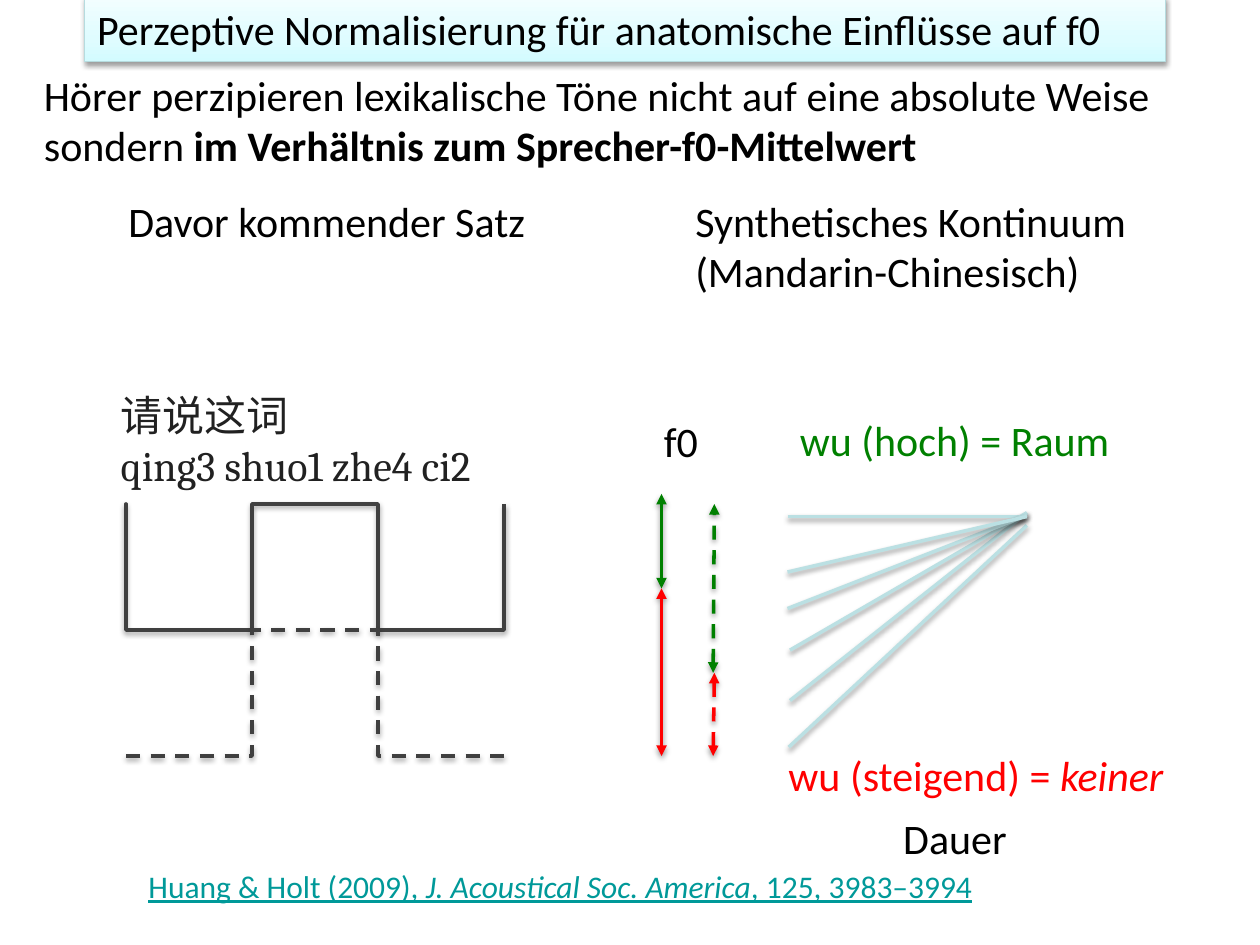
from copy import deepcopy

from lxml import etree
from pptx import Presentation
from pptx import util as u
from pptx.dml.color import RGBColor
from pptx.enum import dml, shapes, text
from pptx.oxml.ns import qn

BLACK = RGBColor(0x00, 0x00, 0x00)
GREEN = RGBColor(0x00, 0x80, 0x00)
RED = RGBColor(0xFF, 0x00, 0x00)
TEAL = RGBColor(0x00, 0x99, 0x99)
INK = RGBColor(0x21, 0x21, 0x21)
CURVE_GREY = RGBColor(0x40, 0x40, 0x40)
PALE_BLUE = RGBColor(0xBB, 0xE0, 0xE3)
TITLE_EDGE = RGBColor(0xB6, 0xDC, 0xDF)
TITLE_STOPS = [(0, RGBColor(0xD3, 0xFB, 0xFF)),
               (0.35, RGBColor(0xDF, 0xFC, 0xFF)),
               (1, RGBColor(0xF2, 0xFE, 0xFF))]

TITLE = "Perzeptive Normalisierung für anatomische Einflüsse auf f0"

# (left, top, width, height), colour, size, font, paragraphs of (text, style) runs
LABELS = [
    ((0.25, 0.5, 9.17, 0.91), BLACK, 24, "Calibri",
     [[("Hörer perzipieren lexikalische Töne nicht auf eine absolute Weise sondern ", ""),
       ("im Verhältnis zum Sprecher-f0-Mittelwert", "b")]]),
    ((0.92, 1.5, 3.5, 0.5), BLACK, 24, "Calibri", [[("Davor kommender Satz", "")]]),
    ((5.42, 1.5, 3.83, 0.91), BLACK, 24, "Calibri",
     [[("Synthetisches Kontinuum (Mandarin-Chinesisch)", "")]]),
    ((0.86, 3.04, 3.28, 0.91), INK, 24, "Cambria",
     [[("请说这词", "")], [("qing3 shuo1 zhe4 ci2", "")]]),
    ((5.17, 3.25, 0.58, 0.51), BLACK, 24, "Calibri", [[("f0", "")]]),
    ((6.25, 3.24, 2.91, 0.51), GREEN, 24, "Calibri", [[("wu (hoch) = Raum", "")]]),
    ((6.16, 5.9, 3.26, 0.51), RED, 24, "Calibri",
     [[("wu (steigend) = ", ""), ("keiner", "i")]]),
    ((7.07, 6.4, 1.08, 0.51), BLACK, 24, "Calibri", [[("Dauer", "")]]),
    ((1.08, 6.83, 8.08, 0.4), TEAL, 18, "Calibri",
     [[("Huang & Holt (2009), ", "u"), ("J. Acoustical Soc. America", "ui"),
       (", 125, 3983–3994", "u")]]),
]

# Pitch contour of the carrier sentence; the dashed one lies lower
CONTOUR = [
    (0.67, 4.56), (0.71, 4.52), (0.77, 4.46), (0.81, 4.44), (0.87, 4.43), (0.94, 4.41),
    (0.97, 4.39), (1.03, 4.38), (1.15, 4.39), (1.2, 4.42), (1.26, 4.45), (1.31, 4.47),
    (1.38, 4.51), (1.44, 4.56), (1.49, 4.6), (1.52, 4.64), (1.6, 4.63), (1.68, 4.64),
    (1.75, 4.66), (1.81, 4.64), (1.88, 4.61), (1.95, 4.56), (2.01, 4.5), (2.06, 4.48),
    (2.12, 4.42), (2.2, 4.38), (2.28, 4.32), (2.36, 4.29), (2.48, 4.23), (2.59, 4.19),
    (2.68, 4.17), (2.75, 4.17), (2.82, 4.18), (2.89, 4.2), (2.96, 4.25), (3.05, 4.3),
    (3.16, 4.34), (3.2, 4.36), (3.27, 4.42), (3.33, 4.48), (3.37, 4.53), (3.43, 4.56),
    (3.49, 4.57), (3.58, 4.58), (3.68, 4.57), (3.74, 4.54), (3.8, 4.52), (3.85, 4.5),
    (3.93, 4.46), (4.03, 4.44), (4.06, 4.43), (4.15, 4.42), (4.25, 4.44), (4.31, 4.47),
    (4.33, 4.48)]
CONTOURS = [(0, False), (1.25, True)]  # drop, dashed

# start, end, colour, dashed
RANGES = [((5.25, 4.67), (5.25, 3.92), GREEN, False),
          ((5.25, 6), (5.25, 4.67), RED, False),
          ((5.66, 5.34), (5.67, 4), GREEN, True),
          ((5.66, 6), (5.67, 5.34), RED, True)]
CONTINUUM = [((6.25, 4.1), (8.14, 4.1)), ((6.26, 5.93), (8.15, 4.17)),
             ((6.27, 5.56), (8.15, 4.07)), ((6.27, 5.16), (8.15, 4.07)),
             ((6.25, 4.83), (8.15, 4.09)), ((6.25, 4.54), (8.15, 4.1))]


def inches(values):
    return [u.Inches(v) for v in values]


def add_shadow(shape):
    """Soft shadow straight below; call once fill and line are set."""
    effects = etree.SubElement(shape._element.spPr, qn("a:effectLst"))
    shadow = etree.SubElement(effects, qn("a:outerShdw"), blurRad=str(u.Pt(3.1)),
                              dist=str(u.Pt(1.6)), dir="5400000", rotWithShape="0")
    black = etree.SubElement(shadow, qn("a:srgbClr"), val="000000")
    etree.SubElement(black, qn("a:alpha"), val="38000")


def style_line(shape, colour, dashed=False, arrows=False):
    shape.line.color.rgb = colour
    shape.line.width = u.Pt(2)
    if dashed:
        shape.line.dash_style = dml.MSO_LINE.DASH
    if arrows:
        for end in ("a:headEnd", "a:tailEnd"):
            etree.SubElement(shape.line._get_or_add_ln(), qn(end), type="triangle")
    add_shadow(shape)


def add_line(slide, start, end, colour, dashed=False, arrows=False):
    line = slide.shapes.add_connector(shapes.MSO_CONNECTOR.STRAIGHT, *inches(start + end))
    style_line(line, colour, dashed, arrows)


def set_font(paragraph, colour, size, name):
    paragraph.alignment = text.PP_ALIGN.LEFT
    paragraph.font.name = name
    paragraph.font.size = u.Pt(size)
    paragraph.font.color.rgb = colour


def format_title(title):
    title.left, title.top, title.width, title.height = inches((0.67, -0.02, 8.58, 0.51))
    title.fill.gradient()
    title.fill.gradient_angle = 90
    stops = title.fill._fill._gradFill.gsLst
    stops.append(deepcopy(stops[-1]))
    for stop, (position, colour) in zip(title.fill.gradient_stops, TITLE_STOPS):
        stop.position = position
        stop.color.rgb = colour
    title.line.color.rgb = TITLE_EDGE
    title.line.width = u.Pt(0.75)
    add_shadow(title)
    frame = title.text_frame
    frame.text = TITLE
    frame.auto_size = text.MSO_AUTO_SIZE.NONE
    frame.vertical_anchor = text.MSO_ANCHOR.TOP
    set_font(frame.paragraphs[0], BLACK, 24, "Calibri")


def add_label(slide, box, colour, size, name, paragraphs):
    frame = slide.shapes.add_textbox(*inches(box)).text_frame
    frame.word_wrap = True
    frame.auto_size = text.MSO_AUTO_SIZE.SHAPE_TO_FIT_TEXT
    for index, runs in enumerate(paragraphs):
        paragraph = frame.add_paragraph() if index else frame.paragraphs[0]
        set_font(paragraph, colour, size, name)
        for words, style in runs:
            run = paragraph.add_run()
            run.text = words
            if "b" in style:
                run.font.bold = True
            if "i" in style:
                run.font.italic = True
            if "u" in style:
                run.font.underline = True


def add_contour(slide, drop, dashed):
    points = [(x, y + drop) for x, y in CONTOUR]
    builder = slide.shapes.build_freeform(*points[0], scale=u.Inches(1))
    builder.add_line_segments(points[1:], close=False)
    contour = builder.convert_to_shape()
    contour.fill.background()
    style_line(contour, CURVE_GREY, dashed)


def main():
    deck = Presentation()
    deck.slide_width, deck.slide_height = inches((10, 7.5))
    slide = deck.slides.add_slide(deck.slide_layouts[5])
    format_title(slide.shapes.title)
    for drop, dashed in CONTOURS:
        add_contour(slide, drop, dashed)
    for start, end, colour, dashed in RANGES:
        add_line(slide, start, end, colour, dashed, arrows=True)
    for start, end in CONTINUUM:
        add_line(slide, start, end, PALE_BLUE)
    for label in LABELS:
        add_label(slide, *label)
    deck.save("out.pptx")


if __name__ == "__main__":
    main()
